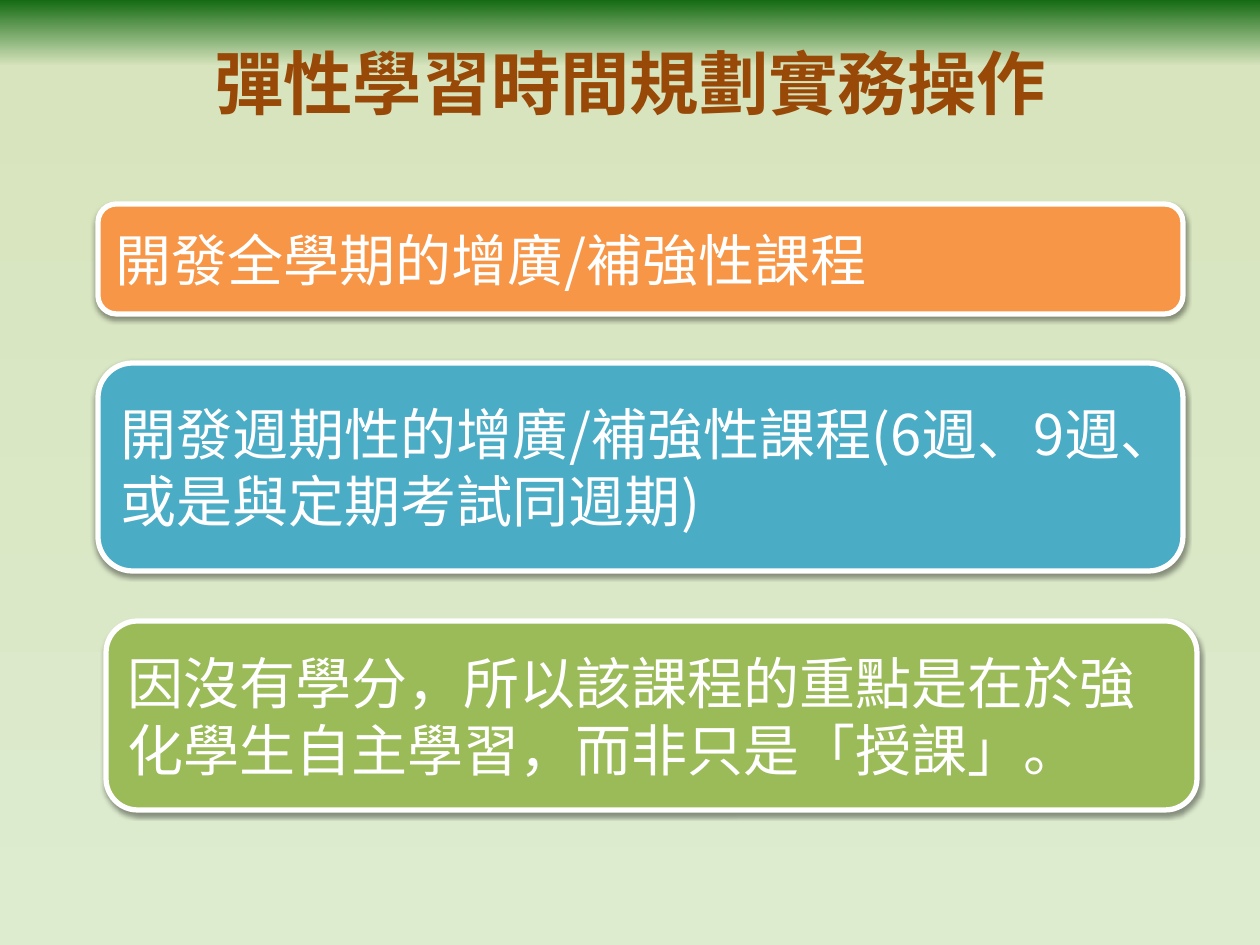
from copy import deepcopy

from lxml import etree
from pptx import Presentation
from pptx.dml.color import RGBColor
from pptx.enum.shapes import MSO_SHAPE
from pptx.enum.text import MSO_ANCHOR, PP_ALIGN
from pptx.oxml.ns import qn
from pptx.util import Emu, Pt

ROUND = MSO_SHAPE.ROUNDED_RECTANGLE
MIDDLE = MSO_ANCHOR.MIDDLE
LEFT, CENTER = PP_ALIGN.LEFT, PP_ALIGN.CENTER
SCALE = 914400 / 126
FACE = "Noto Sans CJK SC"
COLORS = {
    "base": "DDEBCF", "pale": "D7E4BD", "edge": "156B13", "title": "984807",
    "orange": "F79646", "blue": "4BACC6", "green": "9BBB59",
    "white": "FFFFFF", "black": "000000",
}
STOPS = [(0, "base"), (0.93, "pale"), (1, "edge")]
TITLE = {"size": Pt(39.6), "bold": True, "name": FACE}
BODY = {"size": Pt(32), "bold": False, "name": FACE}
SHADOW = {"blurRad": "40000", "dist": "20000", "dir": "5400000", "rotWithShape": "0"}
CARDS = [
    ((98, 204, 1085, 110), "orange", "開發全學期的增廣/補強性課程", 0),
    ((98, 363, 1085, 208), "blue",
     "開發週期性的增廣/補強性課程(6週、9週、或是與定期考試同週期)", 0),
    ((106, 621, 1091, 189), "green",
     "因沒有學分，所以該課程的重點是在於強化學生自主學習，而非只是「授課」。", 0),
]


def px(num):
    """Turn whole pixels into EMU."""
    return Emu(round(num * SCALE))


def hue(key):
    """Look up a named colour."""
    return RGBColor.from_string(COLORS[key])


def paint(slide):
    """Fill the background with a gradient that rises to the top edge."""
    fill = slide.background.fill
    fill.gradient()
    fill.gradient_angle = 90
    stops = slide.background._cSld.find(".//" + qn("a:gsLst"))
    stops.append(deepcopy(stops[-1]))
    for stop, (place, key) in zip(fill.gradient_stops, STOPS):
        stop.position = place
        stop.color.rgb = hue(key)
        for tweak in list(stop.color._color._xClr):
            stop.color._color._xClr.remove(tweak)


def write(shape, text, style, key, align):
    """Put one styled paragraph into a shape."""
    frame = shape.text_frame
    frame.word_wrap = True
    frame.vertical_anchor = MIDDLE
    para = frame.paragraphs[0]
    para.alignment = align
    run = para.add_run()
    run.text = text
    for name, value in style.items():
        setattr(run.font, name, value)
    run.font.color.rgb = hue(key)
    etree.SubElement(run._r.get_or_add_rPr(), qn("a:ea"), typeface=FACE)


def shade(shape):
    """Give a shape a soft shadow below it."""
    shape.shadow.inherit = False
    effect = shape._element.spPr.find(qn("a:effectLst"))
    outer = etree.SubElement(effect, qn("a:outerShdw"), SHADOW)
    color = etree.SubElement(outer, qn("a:srgbClr"), val=COLORS["black"])
    etree.SubElement(color, qn("a:alpha"), val="38000")


def card(slide, box, key, text):
    """Add a rounded card with a white border."""
    shape = slide.shapes.add_shape(ROUND, *map(px, box))
    shape.fill.solid()
    shape.fill.fore_color.rgb = hue(key)
    shape.line.color.rgb = hue("white")
    shape.line.width = Pt(3)
    shade(shape)
    write(shape, text, BODY, "white", LEFT)


def main():
    """Build the slide and save it."""
    deck = Presentation()
    deck.slide_width, deck.slide_height = px(1260), px(945)
    slide = deck.slides.add_slide(deck.slide_layouts[6])
    paint(slide)
    title = slide.shapes.add_textbox(*map(px, (63, 38, 1134, 87)))
    write(title, "彈性學習時間規劃實務操作", TITLE, "title", CENTER)
    for box, key, text, _ in CARDS:
        card(slide, box, key, text)
    deck.save("out.pptx")


if __name__ == "__main__":
    main()
